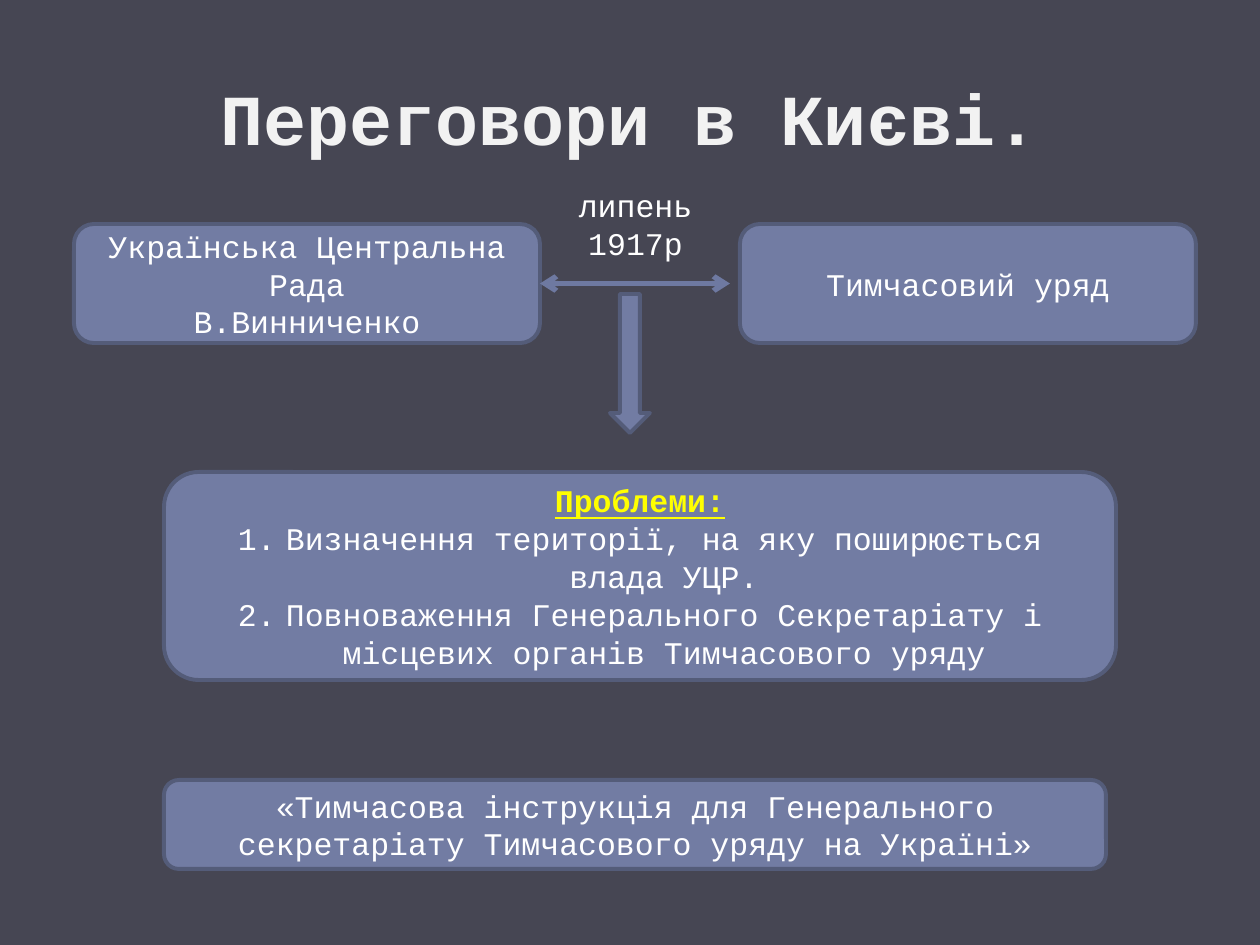
"""Build the slide on the 1917 negotiations in Kyiv."""
from dataclasses import dataclass

from lxml import etree
from pptx import Presentation
from pptx.dml.color import RGBColor
from pptx.enum.shapes import MSO_CONNECTOR, MSO_SHAPE
from pptx.enum.text import MSO_ANCHOR, MSO_AUTO_SIZE, PP_ALIGN
from pptx.oxml.ns import qn
from pptx.util import Emu, Pt

ROUNDED = MSO_SHAPE.ROUNDED_RECTANGLE
DOWN_ARROW = MSO_SHAPE.DOWN_ARROW
STRAIGHT = MSO_CONNECTOR.STRAIGHT
MIDDLE = MSO_ANCHOR.MIDDLE
CENTER = PP_ALIGN.CENTER
FIXED = MSO_AUTO_SIZE.NONE
PX_PER_INCH = 126
TITLE_ONLY = 5
RIGHT_SIDE = 3
FONT = "Courier New"
COLORS = {
    "background": "464653",
    "title": "F2F2F2",
    "text": "FFFFFF",
    "heading": "FFFF00",
    "fill": "727CA3",
    "border": "545C79",
    "link": "6E79A1",
}


@dataclass(frozen=True)
class Line:
    text: str
    color: str = "text"
    size: int = 18
    bold: bool = False
    underline: bool = False
    numbered: bool = False


@dataclass(frozen=True)
class Block:
    left: int
    top: int
    width: int
    height: int
    lines: tuple[Line, ...] = ()
    preset: int = ROUNDED


TITLE = Block(63, 38, 1134, 158, (Line("Переговори в Києві.", "title", 41, bold=True),))
DATE = Block(551, 180, 169, 89, (Line("липень 1917р"),))
RADA = Block(74, 224, 466, 119, (
    Line("Українська Центральна Рада"),
    Line("В.Винниченко"),
))
OTHER_BLOCKS = (
    Block(740, 224, 456, 119, (Line("Тимчасовий уряд"),)),
    Block(610, 294, 40, 139, preset=DOWN_ARROW),
    Block(164, 472, 952, 208, (
        Line("Проблеми:", "heading", bold=True, underline=True),
        Line("Визначення території, на яку поширюється влада УЦР.", numbered=True),
        Line("Повноваження Генерального Секретаріату і місцевих органів "
             "Тимчасового уряду", numbered=True),
    )),
    Block(164, 780, 942, 89, (
        Line("«Тимчасова інструкція для Генерального секретаріату "
             "Тимчасового уряду на Україні»"),
    )),
)


def px(length: int) -> Emu:
    return Emu(round(length * 914400 / PX_PER_INCH))


def rgb(name: str) -> RGBColor:
    return RGBColor.from_string(COLORS[name])


def bounds(block: Block) -> tuple[Emu, ...]:
    return tuple(px(n) for n in (block.left, block.top, block.width, block.height))


def number(paragraph) -> None:
    properties = paragraph._p.get_or_add_pPr()
    indent = px(48)
    properties.set("marL", str(indent))
    properties.set("indent", str(-indent))
    etree.SubElement(properties, qn("a:buAutoNum"), type="arabicPeriod")


def write(frame, lines: tuple[Line, ...]) -> None:
    frame.word_wrap = True
    for index, line in enumerate(lines):
        paragraph = frame.add_paragraph() if index else frame.paragraphs[0]
        paragraph.alignment = CENTER
        if line.numbered:
            number(paragraph)
        run = paragraph.add_run()
        run.text = line.text
        run.font.name = FONT
        run.font.size = Pt(line.size)
        run.font.bold = line.bold
        run.font.underline = line.underline
        run.font.color.rgb = rgb(line.color)


def draw_title(slide, block: Block) -> None:
    title = slide.shapes.title
    title.left, title.top, title.width, title.height = bounds(block)
    title.text_frame.auto_size = FIXED
    title.text_frame.vertical_anchor = MIDDLE
    write(title.text_frame, block.lines)


def draw_block(slide, block: Block):
    shape = slide.shapes.add_shape(block.preset, *bounds(block))
    shape.shadow.inherit = False
    shape.fill.solid()
    shape.fill.fore_color.rgb = rgb("fill")
    shape.line.color.rgb = rgb("border")
    shape.line.width = Pt(2.25)
    shape.text_frame.vertical_anchor = MIDDLE
    write(shape.text_frame, block.lines)
    return shape


def draw_link(slide, source, end_x: int) -> None:
    middle = source.top + source.height // 2
    link = slide.shapes.add_connector(
        STRAIGHT, source.left + source.width, middle, px(end_x), middle)
    link.begin_connect(source, RIGHT_SIDE)
    link.line.color.rgb = rgb("link")
    link.line.width = Pt(3)
    outline = link.line._get_or_add_ln()
    for end in ("a:headEnd", "a:tailEnd"):
        etree.SubElement(outline, qn(end), type="arrow")
    etree.SubElement(link._element.spPr, qn("a:effectLst"))


def main() -> None:
    presentation = Presentation()
    presentation.slide_width, presentation.slide_height = px(1260), px(945)
    slide = presentation.slides.add_slide(presentation.slide_layouts[TITLE_ONLY])
    slide.background.fill.solid()
    slide.background.fill.fore_color.rgb = rgb("background")

    draw_title(slide, TITLE)
    rada = draw_block(slide, RADA)
    draw_link(slide, rada, 730)
    write(slide.shapes.add_textbox(*bounds(DATE)).text_frame, DATE.lines)
    for block in OTHER_BLOCKS:
        draw_block(slide, block)
    presentation.save("out.pptx")


if __name__ == "__main__":
    main()
